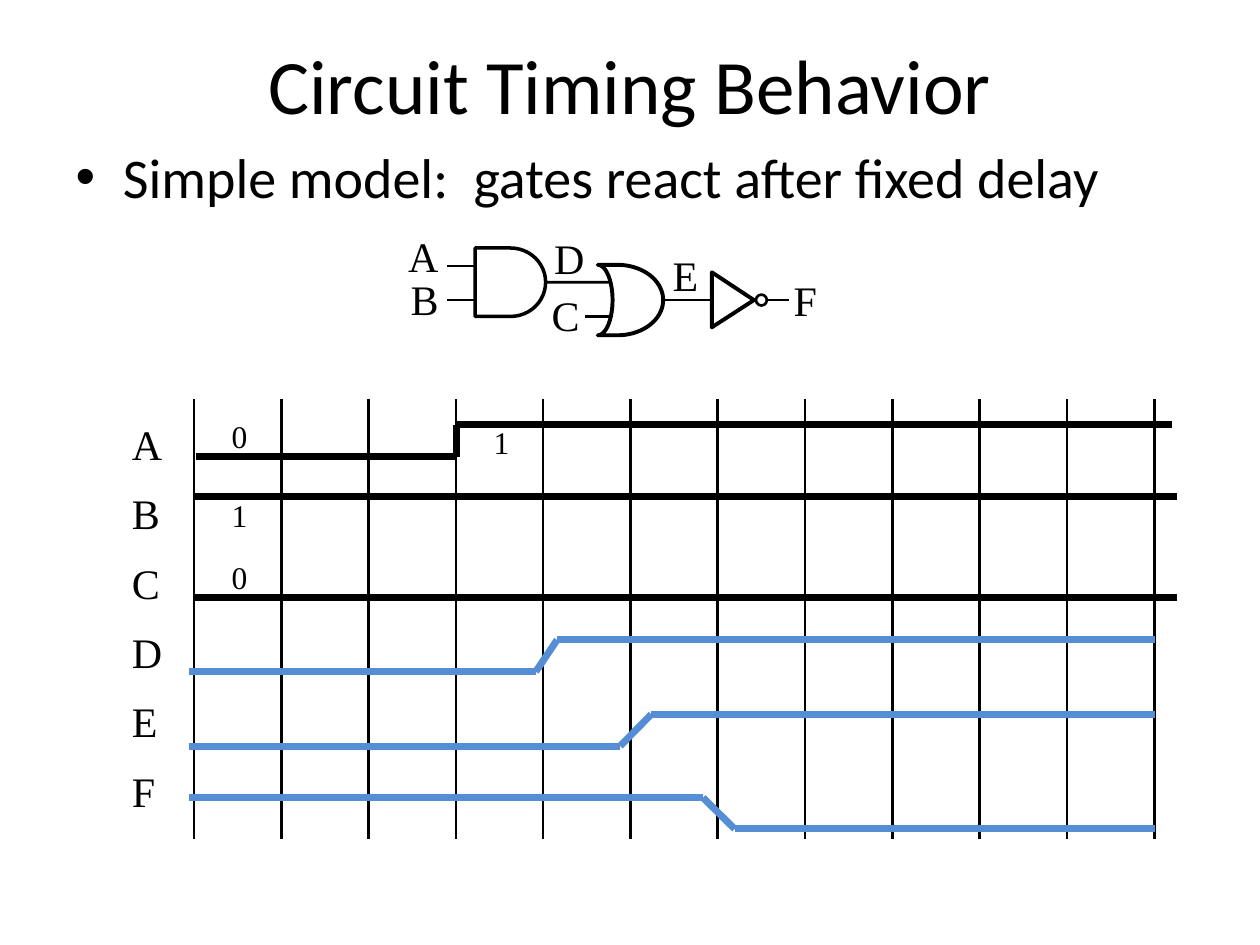
from itertools import pairwise
from math import cos, radians, sin

from lxml.etree import SubElement
from pptx import Presentation
from pptx.dml.color import RGBColor
from pptx.enum.shapes import MSO_CONNECTOR, MSO_SHAPE
from pptx.enum.text import MSO_ANCHOR, MSO_AUTO_SIZE, PP_ALIGN
from pptx.oxml.ns import qn
from pptx.util import Cm, Pt

BLACK = "000000"
BLUE = "558ED5"
SERIF = "Times New Roman"


def write(frame, text, size=24, font=SERIF, colour=BLACK, align=PP_ALIGN.LEFT, gap=None):
    for number, line in enumerate(text.split("\n")):
        para = frame.add_paragraph() if number else frame.paragraphs[0]
        para.alignment = align
        if gap is not None:
            para.space_before = para.space_after = Pt(gap)
        span = para.add_run()
        span.text = line
        span.font.size = Pt(size)
        span.font.name = font
        span.font.color.rgb = RGBColor.from_string(colour)


def stroke(shape, colour, width):
    shape.line.color.rgb = RGBColor.from_string(colour)
    shape.line.width = Pt(width)
    SubElement(shape._element.spPr, qn("a:effectLst"))


deck = Presentation()
deck.slide_width, deck.slide_height = Cm(25.4), Cm(19.05)
page = deck.slides.add_slide(deck.slide_layouts[1])

title = page.shapes.title
title.left, title.top, title.width, title.height = Cm(1.27), Cm(-0.43), Cm(22.86), Cm(3.18)
title.text_frame.vertical_anchor = MSO_ANCHOR.BOTTOM
write(title.text_frame, "Circuit Timing Behavior", size=44, font="Calibri", align=PP_ALIGN.CENTER)

body = page.placeholders[1]
body.left, body.top, body.width, body.height = Cm(1.27), Cm(2.74), Cm(22.86), Cm(14.28)
write(body.text_frame, "Simple model:  gates react after fixed delay", size=32, font="Calibri")

circuit = page.shapes.add_group_shape()

and_gate = circuit.shapes.add_shape(MSO_SHAPE.FLOWCHART_DELAY, Cm(9.58), Cm(5), Cm(1.42), Cm(1.38))
bubble = circuit.shapes.add_shape(MSO_SHAPE.OVAL, Cm(15.24), Cm(5.94), Cm(0.22), Cm(0.22))

back = [(12.05 + 0.3 * cos(radians(a)), 6.05 + 0.71 * sin(radians(a))) for a in range(-90, 91, 5)]
front = [(12.45 + 0.92 * cos(radians(a)), 6.05 + 0.71 * sin(radians(a))) for a in range(90, -91, -5)]
inverter = [(14.35, 5.49), (14.35, 6.6), (15.2, 6.05)]
outlines = []
for points in (back + front, inverter):
    corners = [(Cm(x), Cm(y)) for x, y in points]
    builder = circuit.shapes.build_freeform(*corners[0])
    builder.add_line_segments(corners[1:], close=True)
    outlines.append(builder.convert_to_shape())

for gate, width in zip([and_gate, bubble, *outlines], [2, 1.5, 2.25, 2.25]):
    gate.fill.background()
    stroke(gate, BLACK, width)

wires = [
    (9.02, 5.36, 9.58, 5.36),
    (9.02, 6.05, 9.58, 6.05),
    (11.79, 6.38, 12.29, 6.38),
    (13.36, 6.05, 14.35, 6.05),
    (15.47, 6.05, 15.9, 6.05),
    (11, 5.69, 12.29, 5.69),
]
for ends in wires:
    wire = circuit.shapes.add_connector(MSO_CONNECTOR.STRAIGHT, *map(Cm, ends))
    stroke(wire, BLACK, 1.5)
wire.begin_connect(and_gate, 3)

grid = page.shapes.add_group_shape()
for column in range(12):
    x = Cm(3.91 + 1.76 * column)
    tick = grid.shapes.add_connector(MSO_CONNECTOR.STRAIGHT, x, Cm(8.05), x, Cm(16.92))
    stroke(tick, BLACK, 1.5)

signals = [
    (BLACK, [(3.96, 9.21), (9.21, 9.21), (9.21, 8.56), (23.62, 8.56)]),
    (BLACK, [(3.89, 10.01), (23.72, 10.01)]),
    (BLACK, [(3.89, 12.04), (23.72, 12.04)]),
    (BLUE, [(3.81, 13.54), (10.8, 13.54), (11.23, 12.9), (23.29, 12.9)]),
    (BLUE, [(3.81, 15.04), (12.5, 15.04), (13.13, 14.4), (23.29, 14.4)]),
    (BLUE, [(3.81, 16.08), (14.17, 16.08), (14.81, 16.71), (23.29, 16.71)]),
]
for colour, points in signals:
    for start, end in pairwise(points):
        segment = page.shapes.add_connector(MSO_CONNECTOR.STRAIGHT, *map(Cm, start + end))
        stroke(segment, colour, 4)

labels = [
    (page, "A\nB\nC\nD\nE\nF", 2.41, 8.31, 1.12, 8.56, 24, 5.4),
    (page, "0", 4.42, 8.28, 0.81, 1.02, 18, None),
    (page, "1", 4.42, 9.88, 0.81, 1.02, 18, None),
    (page, "0", 4.42, 11.13, 0.81, 1.02, 18, None),
    (page, "1", 9.7, 8.41, 0.81, 1.02, 18, None),
    (circuit, "A", 7.98, 4.52, 1.12, 1.27, 24, None),
    (circuit, "B", 8.03, 5.38, 1.07, 1.27, 24, None),
    (circuit, "C", 10.87, 5.72, 1.07, 1.27, 24, None),
    (circuit, "D", 10.92, 4.57, 1.12, 1.27, 24, None),
    (circuit, "E", 13.31, 4.9, 1.02, 1.27, 24, None),
    (circuit, "F", 15.75, 5.41, 0.97, 1.27, 24, None),
]
for owner, text, left, top, width, height, size, gap in labels:
    box = owner.shapes.add_textbox(Cm(left), Cm(top), Cm(width), Cm(height))
    box.text_frame.word_wrap = False
    box.text_frame.auto_size = MSO_AUTO_SIZE.SHAPE_TO_FIT_TEXT
    write(box.text_frame, text, size=size, gap=gap)

deck.save("out.pptx")
